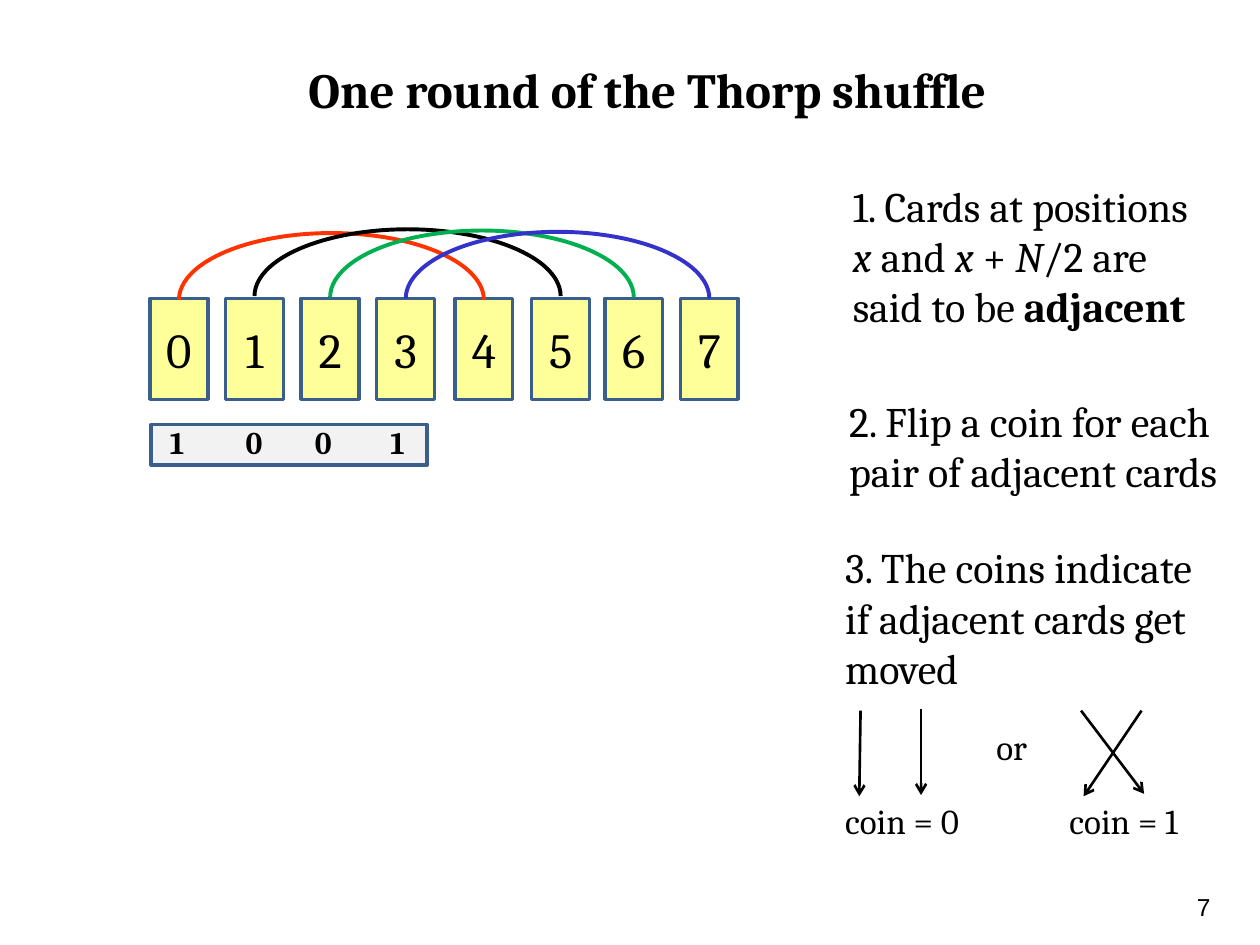
"""Build a slide that explains one round of the Thorp shuffle."""
from lxml.etree import SubElement
from pptx import Presentation
from pptx.dml.color import RGBColor
from pptx.enum.shapes import MSO_CONNECTOR, MSO_SHAPE
from pptx.enum.text import MSO_ANCHOR, MSO_AUTO_SIZE, PP_ALIGN
from pptx.oxml.ns import qn
from pptx.util import Inches, Pt

COLORS = {"ink": "000000", "card": "FFFF99", "bar": "F2F2F2", "border": "3A5F8C",
          "red": "FF3300", "green": "00B050", "blue": "3333CC"}

CARD_LEFTS = [1.19, 1.79, 2.39, 2.99, 3.61, 4.22, 4.8, 5.4]
CARD_TOP, CARD_WIDTH, CARD_HEIGHT = 2.37, 0.46, 0.8
COIN_BAR = (1.2, 3.37, 2.19, 0.32)
COINS = [("1", 1.25), ("0", 1.85), ("0", 2.4), ("1", 3)]
ARCS = [("red", 2.38), ("ink", 2.35), ("green", 2.36), ("blue", 2.37)]
ARC_RISE = 0.53
ARROWS = [((6.83, 5.64), (6.82, 6.32)), ((7.31, 5.63), (7.31, 6.31)),
          ((8.58, 5.64), (9.08, 6.3)), ((9.06, 5.64), (8.6, 6.32))]

BOLD, ITALIC, SMALL = {"bold": True}, {"italic": True}, {"size": Pt(20)}
TITLE = [[("One round of the Thorp shuffle", BOLD)]]
STEP_ONE = [
    [("1. Cards at positions", {})],
    [("x", ITALIC), (" and ", {}), ("x ", ITALIC), ("+ ", {}), ("N", ITALIC), ("/2 are", {})],
    [("said to be ", {}), ("adjacent", BOLD)],
]
STEP_TWO = [[("2. Flip a coin for each", {})], [("pair of adjacent cards", {})]]
STEP_THREE = [
    [("3. The coins indicate", {})],
    [("if adjacent cards get", {})],
    [("moved", {})],
    [("coin = 0", SMALL), ("\t", {}), ("coin = 1", SMALL)],
]
TEXTS = [
    ((2.35, 0.42, 5.86, 0.57), TITLE, 28, "Cambria"),
    ((6.67, 1.38, 3.17, 1.31), STEP_ONE, 24, "Cambria"),
    ((6.64, 3.09, 3.29, 0.91), STEP_TWO, 24, "Cambria"),
    ((7.81, 5.71, 0.53, 0.44), [[("or", {})]], 20, "Cambria"),
    ((9.4, 7.03, 0.44, 0.34), [[("7", {})]], 14, "Arial"),
]
COIN_LABEL_GAP, COIN_LABEL_TAB = Pt(57), Inches(1.78)


def color(name):
    return RGBColor.from_string(COLORS[name])


def write(paragraph, runs, size, font="Cambria"):
    for text, changes in runs:
        run = paragraph.add_run()
        run.text = text
        run.font.color.rgb = color("ink")
        for attribute, value in {"name": font, "size": Pt(size), **changes}.items():
            setattr(run.font, attribute, value)


def add_text(slide, box, paragraphs, size, font="Cambria", wrap=False):
    frame = slide.shapes.add_textbox(*map(Inches, box)).text_frame
    frame.word_wrap = wrap
    frame.auto_size = MSO_AUTO_SIZE.SHAPE_TO_FIT_TEXT
    for index, runs in enumerate(paragraphs):
        paragraph = frame.add_paragraph() if index else frame.paragraphs[0]
        write(paragraph, runs, size, font)
    return frame


def add_shape(slide, kind, box, line, width, fill=None):
    shape = slide.shapes.add_shape(kind, *map(Inches, box))
    shape.shadow.inherit = False
    shape.line.color.rgb = color(line)
    shape.line.width = Pt(width)
    if fill:
        shape.fill.solid()
        shape.fill.fore_color.rgb = color(fill)
    else:
        shape.fill.background()
    return shape


def add_card(slide, number, left):
    box = (left, CARD_TOP, CARD_WIDTH, CARD_HEIGHT)
    frame = add_shape(slide, MSO_SHAPE.RECTANGLE, box, "border", 2, "card").text_frame
    frame.vertical_anchor = MSO_ANCHOR.MIDDLE
    frame.paragraphs[0].alignment = PP_ALIGN.CENTER
    write(frame.paragraphs[0], [(str(number), {})], 28)


def add_arc(slide, start, end, base, line):
    box = (start, base - ARC_RISE, end - start, 2 * ARC_RISE)
    arc = add_shape(slide, MSO_SHAPE.ARC, box, line, 2.25)
    arc.adjustments[0] = 108
    arc.adjustments[1] = 0


def add_arrow(slide, start, end):
    arrow = slide.shapes.add_connector(MSO_CONNECTOR.STRAIGHT, *map(Inches, start + end))
    arrow.line.color.rgb = color("ink")
    arrow.line.width = Pt(1.5)
    SubElement(arrow.line._get_or_add_ln(), qn("a:tailEnd"), type="arrow")
    SubElement(arrow._element.spPr, qn("a:effectLst"))


def add_step_three(slide):
    frame = add_text(slide, (6.61, 4.25, 3.13, 2.52), STEP_THREE, 24, wrap=True)
    labels = frame.paragraphs[-1]
    labels.space_before = COIN_LABEL_GAP
    tabs = SubElement(labels._p.get_or_add_pPr(), qn("a:tabLst"))
    SubElement(tabs, qn("a:tab"), pos=str(COIN_LABEL_TAB), algn="l")


def main():
    presentation = Presentation()
    presentation.slide_width, presentation.slide_height = Inches(10), Inches(7.5)
    slide = presentation.slides.add_slide(presentation.slide_layouts[6])
    add_shape(slide, MSO_SHAPE.RECTANGLE, COIN_BAR, "border", 2, "bar")
    for number, left in enumerate(CARD_LEFTS):
        add_card(slide, number, left)
    for coin, left in COINS:
        add_text(slide, (left, 3.31, 0.35, 0.4), [[(coin, BOLD)]], 18)
    centers = [left + CARD_WIDTH / 2 for left in CARD_LEFTS]
    half = len(centers) // 2
    for start, end, (line, base) in zip(centers[:half], centers[half:], ARCS):
        add_arc(slide, start, end, base, line)
    for box, paragraphs, size, font in TEXTS:
        add_text(slide, box, paragraphs, size, font)
    add_step_three(slide)
    for start, end in ARROWS:
        add_arrow(slide, start, end)
    presentation.save("out.pptx")


if __name__ == "__main__":
    main()
